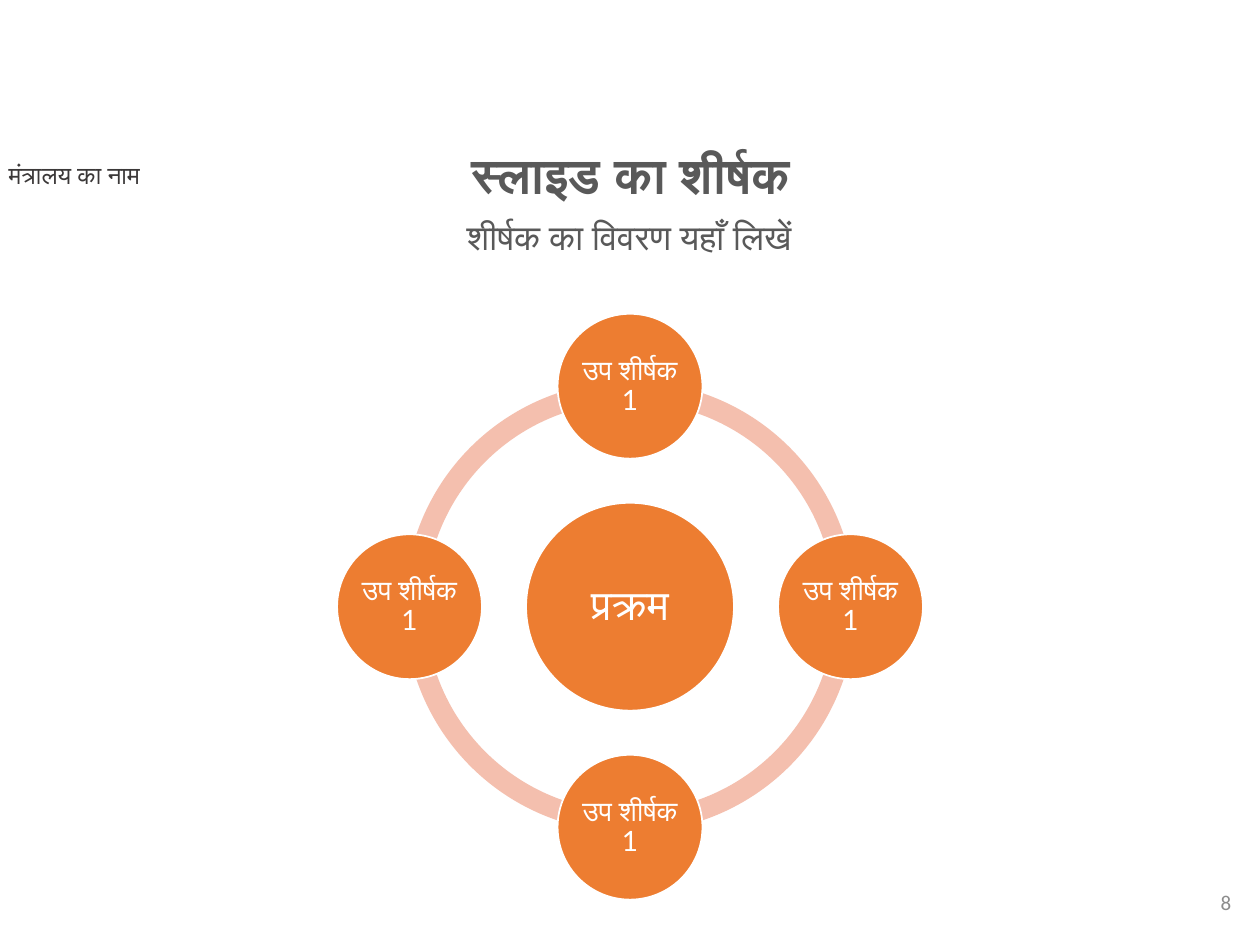
import math
import pptx
import pptx.util
import pptx.dml.color
import pptx.enum.shapes
import pptx.enum.text

Pt = pptx.util.Pt
RGB = pptx.dml.color.RGBColor
Kind = pptx.enum.shapes.MSO_SHAPE
Align = pptx.enum.text.PP_ALIGN
Anchor = pptx.enum.text.MSO_ANCHOR

WHITE = RGB(0xFF, 0xFF, 0xFF)
ORANGE = RGB(0xED, 0x7D, 0x31)
PEACH = RGB(0xF4, 0xBF, 0xAE)
DARK = RGB(0x3B, 0x38, 0x38)
GRAY = RGB(0x59, 0x59, 0x59)
PALE = RGB(0x8C, 0x8C, 0x8C)

MID_X, MID_Y = 360, 346.7
RING, ORBIT = 257.8, 126
HUB, NODE = 118.8, 82.8


class Page:
    head_font = "Calibri"
    disc_font = "Lato"

    def __init__(self, slide):
        self.slide = slide

    def put_text(self, frame, text, size, color, font, align, bold=False):
        frame.word_wrap = True
        frame.text = text
        para = frame.paragraphs[0]
        para.alignment = align
        run = para.runs[0].font
        run.name, run.size, run.bold = font, Pt(size), bold
        run.color.rgb = color
        return para

    def label(self, box, text, size, color, align=Align.LEFT, bold=False,
              lines=1.0, anchor=Anchor.TOP):
        shape = self.slide.shapes.add_textbox(*map(Pt, box))
        shape.text_frame.vertical_anchor = anchor
        para = self.put_text(shape.text_frame, text, size, color,
                             self.head_font, align, bold)
        para.line_spacing = lines

    def round(self, kind, x, y, width, fill):
        """Add a square-framed shape centred on x, y."""
        shape = self.slide.shapes.add_shape(
            kind, Pt(x - width / 2), Pt(y - width / 2), Pt(width), Pt(width))
        shape.shadow.inherit = False
        shape.fill.solid()
        shape.fill.fore_color.rgb = fill
        return shape

    def arc(self, start, end):
        """Add a piece of the ring; angles are clockwise degrees from east."""
        shape = self.round(Kind.BLOCK_ARC, MID_X, MID_Y, RING, PEACH)
        shape.line.fill.background()
        # One adjustment unit is 100000 sixty-thousandths of a degree.
        for i, value in enumerate((start * 0.6, end * 0.6, 0.046)):
            shape.adjustments[i] = value

    def disc(self, x, y, width, text, size, inset):
        shape = self.round(Kind.OVAL, x, y, width, ORANGE)
        shape.line.color.rgb = WHITE
        shape.line.width = Pt(1)
        frame = shape.text_frame
        frame.margin_left = frame.margin_right = Pt(inset)
        frame.margin_top = frame.margin_bottom = Pt(inset)
        frame.vertical_anchor = Anchor.MIDDLE
        para = self.put_text(frame, text, size, WHITE, self.disc_font,
                             Align.CENTER)
        para.line_spacing = 0.9


def main():
    deck = pptx.Presentation()
    deck.slide_width, deck.slide_height = Pt(720), Pt(540)
    page = Page(deck.slides.add_slide(deck.slide_layouts[6]))

    page.label((-2.2, 87.8, 157, 24.5), "मंत्रालय का नाम", 14, DARK)
    page.label((548.6, 501, 162, 28.8), "8", 12, PALE, Align.RIGHT,
               anchor=Anchor.MIDDLE)
    page.label((105, 122.4, 509, 45.4), "शीर्षक का विवरण यहाँ लिखें", 20, GRAY,
               Align.CENTER, lines=0.9)
    page.label((134, 82.8, 453, 33.8), "स्लाइड का शीर्षक", 28, GRAY,
               Align.CENTER, bold=True, lines=0.9)

    for start in (180, 90, 0, 270):
        page.arc(start, (start + 90) % 360)
    page.disc(MID_X, MID_Y, HUB, "प्रक्रम", 24, 2.2)
    for turn in (-90, 0, 90, 180):
        angle = math.radians(turn)
        page.disc(MID_X + ORBIT * math.cos(angle),
                  MID_Y + ORBIT * math.sin(angle),
                  NODE, "उप शीर्षक 1", 16, 1.4)

    deck.save("out.pptx")


if __name__ == "__main__":
    main()
